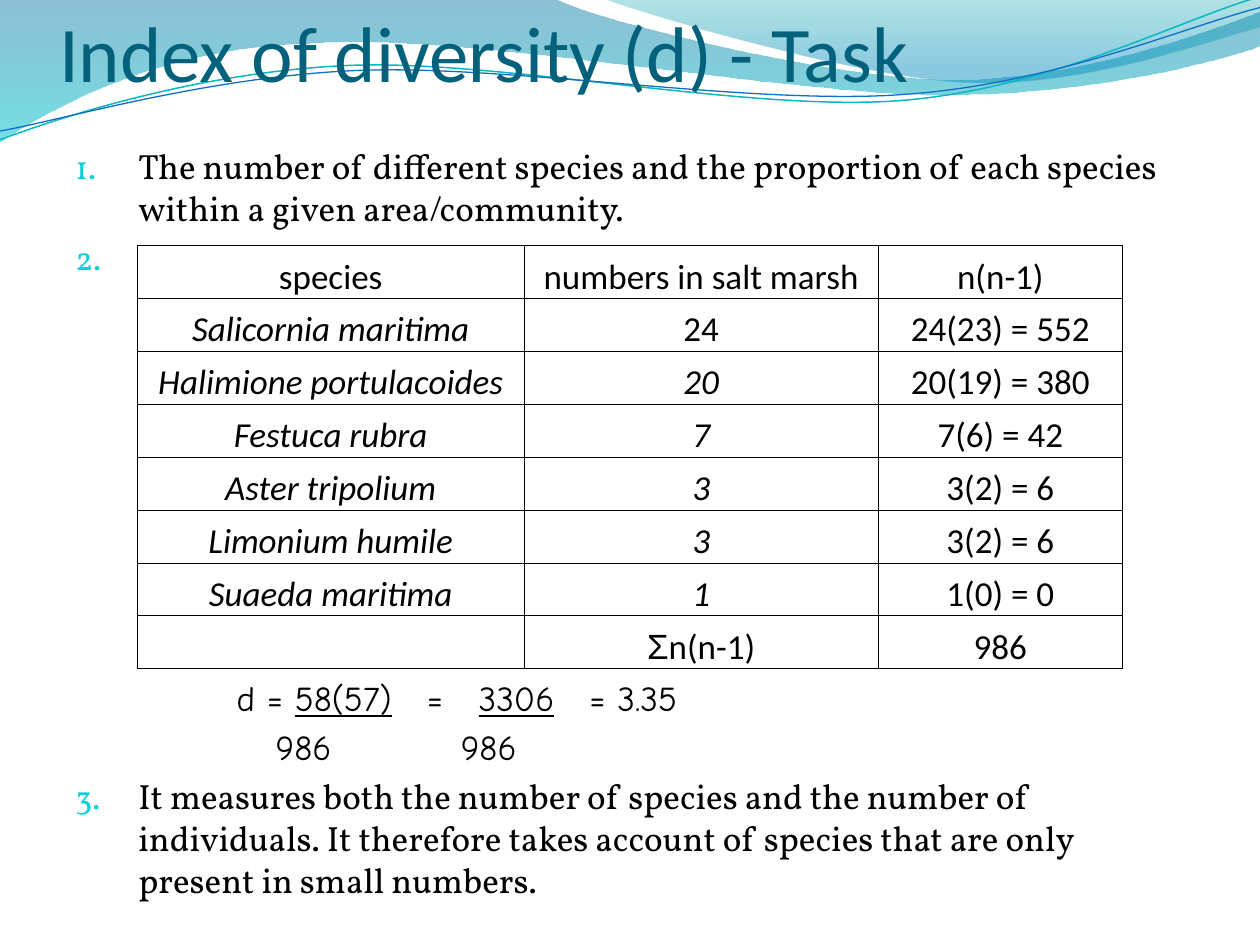
import pptx
import pptx.dml.color
import pptx.enum.text
import pptx.oxml
import pptx.oxml.ns
import pptx.util

Inches = pptx.util.Inches
Pt = pptx.util.Pt
ANCHOR = pptx.enum.text.MSO_ANCHOR
ALIGN = pptx.enum.text.PP_ALIGN

COLORS = {
    "title": "04617B", "text": "000000", "number": "0BD0D9", "border": "000000",
    "teal line": "0AB8BF", "blue line": "0F6FC6",
    "left wave top": "0074A1", "left wave bottom": "00C6CF",
    "right wave top": "00A1A9", "right wave bottom": "008BBF",
}

# Each outline is a start point, then lines (one point) and curves (three points).
LEFT_WAVE = [
    (0, 0), [(4.4, -0.01)],
    [(4.76, 0.17), (6.64, 0.63), (7.58, 0.63)], [(8.53, 0.63), (9.58, 0.26), (10, 0.09)],
    [(10.01, 0.36)],
    [(9.83, 0.44), (8.7, 0.76), (7.46, 0.75)], [(6.22, 0.75), (3.82, 0.28), (2.57, 0.34)],
    [(1.29, 0.36), (0.46, 0.83), (-0.01, 1.13)], [(0, 0)],
]
RIGHT_WAVE = [
    (4.79, -0.01),
    [(5.09, 0.11), (6.82, 0.62), (7.69, 0.65)], [(8.56, 0.69), (9.61, 0.32), (10, 0.21)],
    [(10, 0)], [(4.79, -0.01)],
]
TEAL_CURVE = [
    (0, 1.11),
    [(0.48, 0.93), (1.58, 0.57), (2.77, 0.52)], [(3.95, 0.47), (5.93, 0.89), (7.13, 0.8)],
    [(8.33, 0.71), (9.38, 0.15), (9.98, -0.02)],
]
BLUE_CURVE = [
    (0, 1.04),
    [(0.47, 0.96), (1.64, 0.61), (2.83, 0.56)], [(4.03, 0.51), (5.97, 0.84), (7.17, 0.75)],
    [(8.36, 0.67), (9.41, 0.21), (10, 0.06)],
]

SPECIES_ROWS = [
    ("species", "numbers in salt marsh", "n(n-1)"),
    ("Salicornia maritima", "24", "24(23) = 552"),
    ("Halimione portulacoides", "20", "20(19) = 380"),
    ("Festuca rubra", "7", "7(6) = 42"),
    ("Aster tripolium", "3", "3(2) = 6"),
    ("Limonium humile", "3", "3(2) = 6"),
    ("Suaeda maritima", "1", "1(0) = 0"),
    ("", "Σn(n-1)", "986"),
]


def rgb(name):
    return pptx.dml.color.RGBColor.from_string(COLORS[name])


def apply_format(target, values):
    for name, value in values.items():
        setattr(target, name, value)


def add_element(parent, tag, **attributes):
    element = pptx.oxml.parse_xml(f"<{tag} {pptx.oxml.ns.nsdecls('a')}/>")
    for name, value in attributes.items():
        element.set(name, str(value))
    parent.append(element)
    return element


class SlideBuilder:
    body_size = Pt(20)
    paragraph_gap = Pt(4)

    def __init__(self, presentation):
        self.slide = presentation.slides.add_slide(presentation.slide_layouts[6])

    def freeform(self, outline, close):
        """Build the outline with straight segments, then bend those that are curves."""
        start, *segments = outline
        builder = self.slide.shapes.build_freeform(*map(Inches, start))
        builder.add_line_segments([tuple(map(Inches, segment[-1])) for segment in segments],
                                  close=close)
        shape = builder.convert_to_shape()
        shape.shadow.inherit = False
        lines = list(shape._element.iter(pptx.oxml.ns.qn("a:lnTo")))
        for line, segment in zip(lines, segments):
            if len(segment) == 3:
                curve = add_element(line.getparent(), "a:cubicBezTo")
                line.getparent().replace(line, curve)
                for x, y in segment:
                    add_element(curve, "a:pt", x=Inches(x) - shape.left, y=Inches(y) - shape.top)
        return shape

    def wave(self, outline, stops):
        """Add a filled wave; stops hold position, colour and opacity in percent."""
        shape = self.freeform(outline, True)
        shape.line.fill.background()
        shape.fill.gradient()
        shape.fill.gradient_angle = 270
        for stop, (position, color, opacity) in zip(shape.fill.gradient_stops, stops):
            stop.position = position
            stop.color.rgb = rgb(color)
            color_element = stop._gs.find(pptx.oxml.ns.qn("a:srgbClr"))
            add_element(color_element, "a:alpha", val=opacity * 1000)

    def curve(self, outline, color, width):
        shape = self.freeform(outline, False)
        shape.fill.background()
        shape.line.color.rgb = rgb(color)
        shape.line.width = Pt(width)

    def text_frame(self, left, top, width, height, **formats):
        box = self.slide.shapes.add_textbox(*map(Inches, (left, top, width, height)))
        apply_format(box.text_frame, {"word_wrap": True, **formats})
        return box.text_frame

    def run(self, paragraph, text, font, color="text", **formats):
        run = paragraph.add_run()
        run.text = text
        apply_format(run.font, {"name": font, "size": self.body_size, **formats})
        run.font.color.rgb = rgb(color)

    def numbered(self, paragraph, number, text):
        paragraph.space_before = self.paragraph_gap
        properties = paragraph._p.get_or_add_pPr()
        properties.set("marL", str(Inches(0.5)))
        properties.set("indent", str(-Inches(0.5)))
        add_element(add_element(properties, "a:buClr"), "a:srgbClr", val=COLORS["number"])
        add_element(properties, "a:buSzPct", val=95000)
        add_element(properties, "a:buAutoNum", type="arabicPeriod", startAt=number)
        self.run(paragraph, text, "Vollkorn")

    def formula(self, paragraph, tab_stops, parts, gap):
        """Add a line of (text, underlined) parts set on tab stops."""
        paragraph.space_before = gap
        tab_list = add_element(paragraph._p.get_or_add_pPr(), "a:tabLst")
        for stop in tab_stops:
            add_element(tab_list, "a:tab", pos=Inches(stop), algn="l")
        for text, underlined in parts:
            self.run(paragraph, text, "Comic Neue", underline=underlined)

    def table(self, left, top, column_widths, row_height, rows):
        frame = self.slide.shapes.add_table(
            len(rows), len(column_widths), Inches(left), Inches(top),
            Inches(sum(column_widths)), Inches(row_height * len(rows)))
        table = frame.table
        apply_format(table, {"first_row": False, "horz_banding": False})
        for column, width in zip(table.columns, column_widths):
            column.width = Inches(width)
        for row_index, texts in enumerate(rows):
            table.rows[row_index].height = Inches(row_height)
            is_species = 0 < row_index < len(rows) - 1
            for column_index, text in enumerate(texts):
                italic = is_species and (column_index == 0 or column_index == 1 and row_index > 1)
                self.cell(table.cell(row_index, column_index), text, italic)

    def cell(self, cell, text, italic):
        margin = Inches(0.01)
        apply_format(cell, {"vertical_anchor": ANCHOR.BOTTOM, "margin_left": margin,
                            "margin_right": margin, "margin_top": margin, "margin_bottom": 0})
        properties = cell._tc.get_or_add_tcPr()
        for side in "LRTB":
            border = add_element(properties, f"a:ln{side}", w=Pt(0.5))
            add_element(add_element(border, "a:solidFill"), "a:srgbClr", val=COLORS["border"])
        cell.fill.background()
        paragraph = cell.text_frame.paragraphs[0]
        paragraph.alignment = ALIGN.CENTER
        if text.startswith("Σ"):
            self.run(paragraph, "Σ", "Arial")
            text = text[1:]
        if text:
            self.run(paragraph, text, "Calibri", italic=italic)


def main():
    presentation = pptx.Presentation()
    apply_format(presentation, {"slide_width": Inches(10), "slide_height": Inches(7.5)})
    builder = SlideBuilder(presentation)

    builder.wave(LEFT_WAVE, [(0, "left wave top", 45), (1, "left wave bottom", 55)])
    builder.wave(RIGHT_WAVE, [(0, "right wave top", 30), (0.8, "right wave bottom", 45)])
    builder.curve(TEAL_CURVE, "teal line", 0.85)
    builder.curve(BLUE_CURVE, "blue line", 0.75)

    title = builder.text_frame(0.47, 0, 9, 0.78, vertical_anchor=ANCHOR.BOTTOM,
                               margin_left=0, margin_right=0, margin_bottom=0)
    builder.run(title.paragraphs[0], "Index of diversity (d) - Task", "Calibri", "title",
                size=Pt(45))

    body = builder.text_frame(0.5, 1.1, 9, 6.25)
    builder.numbered(body.paragraphs[0], 1, "The number of different species and the proportion "
                     "of each species within a given area/community.")
    builder.numbered(body.add_paragraph(), 1, " ")
    builder.formula(body.add_paragraph(), [1.28, 2.79, 3.2, 4.08],
                    [("\td = ", False), ("58(57)", True), ("\t=\t", False), ("3306", True),
                     ("\t= 3.35", False)], Pt(228))
    builder.formula(body.add_paragraph(), [1.59, 3.06], [("\t986\t986", False)],
                    builder.paragraph_gap)
    builder.numbered(body.add_paragraph(), 3, "It measures both the number of species and the "
                     "number of individuals. It therefore takes account of species that are "
                     "only present in small numbers.")

    builder.table(1.09, 1.95, [3.07, 2.81, 1.94], 0.42, SPECIES_ROWS)
    presentation.save("out.pptx")


if __name__ == "__main__":
    main()
